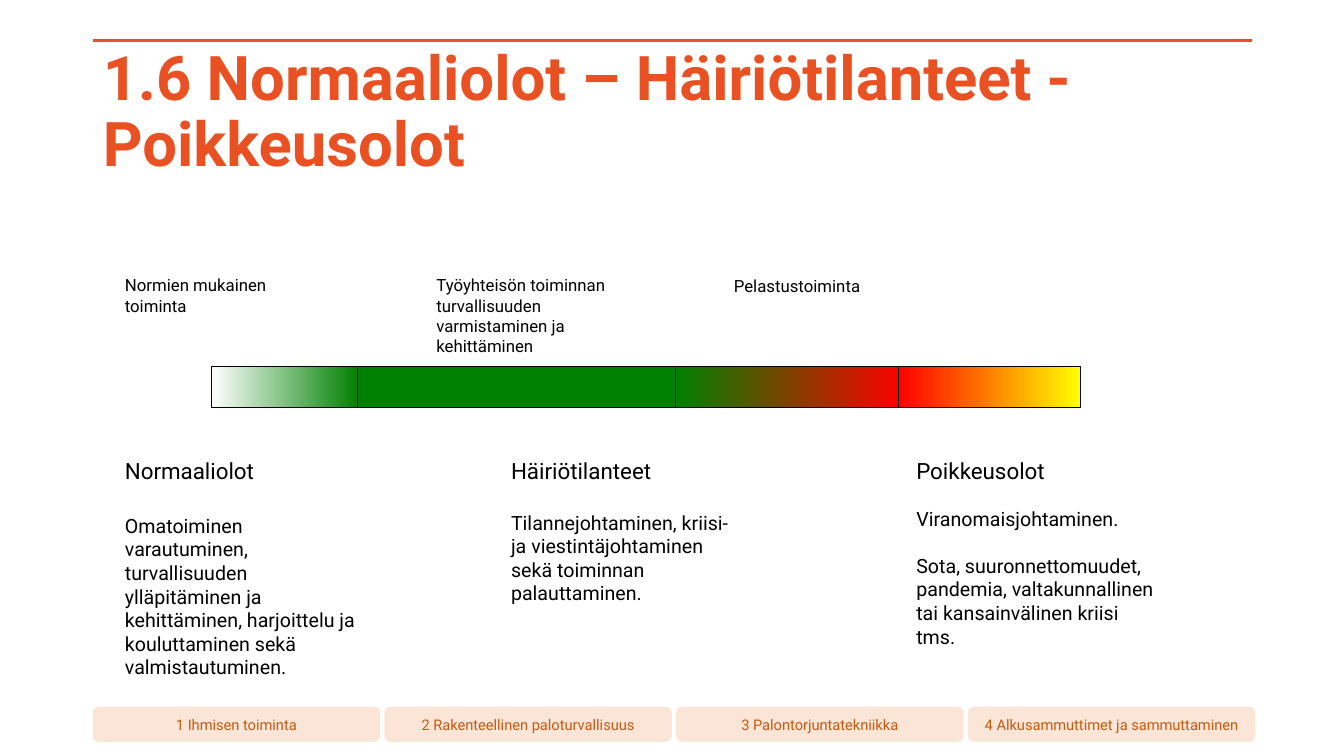
from dataclasses import dataclass

from lxml import etree
from pptx import Presentation
from pptx.dml.color import RGBColor
from pptx.enum.shapes import MSO_CONNECTOR, MSO_SHAPE
from pptx.enum.text import MSO_ANCHOR, MSO_AUTO_SIZE, PP_ALIGN
from pptx.oxml.ns import qn
from pptx.util import Inches, Pt

RECT = MSO_SHAPE.RECTANGLE
ROUND = MSO_SHAPE.ROUNDED_RECTANGLE
STRAIGHT = MSO_CONNECTOR.STRAIGHT
MIDDLE = MSO_ANCHOR.MIDDLE
LEFT, CENTER = PP_ALIGN.LEFT, PP_ALIGN.CENTER
FIXED = MSO_AUTO_SIZE.NONE


@dataclass(frozen=True)
class Theme:
    """Colours, font and type sizes of the slide."""
    font: str = "Roboto"
    accent: str = "E95123"
    tab: str = "FBE5D6"
    tab_ink: str = "C55A11"
    ink: str = "000000"
    white: str = "FFFFFF"
    green: str = "008000"
    red: str = "FF0000"
    yellow: str = "FFFF00"
    title: float = 44
    head: float = 16
    body: float = 14
    label: float = 12
    small: float = 10.5


THEME = Theme()
TABS = (
    "1 Ihmisen toiminta",
    "2 Rakenteellinen paloturvallisuus",
    "3 Palontorjuntatekniikka",
    "4 Alkusammuttimet ja sammuttaminen",
)
ZONES = (
    (2.1, 1.46, THEME.white, THEME.green),
    (3.55, 3.15, THEME.green, THEME.green),
    (6.7, 2.28, THEME.green, THEME.red),
    (8.91, 1.81, THEME.red, THEME.yellow),
)
LABELS = (
    ((1.14, 2.68, 2.23, 0.3), "Normien mukainen toiminta"),
    ((4.23, 2.68, 2.17, 0.91),
     "Työyhteisön toiminnan turvallisuuden varmistaminen ja kehittäminen"),
    ((7.18, 2.69, 1.81, 0.3), "Pelastustoiminta"),
)
STATES = (
    ((1.14, 4.49, 2.55, 1.85), "Normaaliolot", (
        (21, "Omatoiminen varautuminen, turvallisuuden ylläpitäminen ja "
             "kehittäminen, harjoittelu ja kouluttaminen sekä valmistautuminen."),
    )),
    ((4.97, 4.49, 2.38, 1.35), "Häiriötilanteet", (
        (18.75, "Tilannejohtaminen, kriisi- ja viestintäjohtaminen sekä "
                "toiminnan palauttaminen."),
    )),
    ((8.99, 4.49, 2.63, 1.78), "Poikkeusolot", (
        (16.4, "Viranomaisjohtaminen."),
        (16.4, "Sota, suuronnettomuudet, pandemia, valtakunnallinen tai "
               "kansainvälinen kriisi tms."),
    )),
)


def tint(code):
    """Turn a hex code into a colour."""
    return RGBColor.from_string(code)


def span(box):
    """Turn a box in inches into lengths."""
    return [Inches(side) for side in box]


def write(para, text, size, color=THEME.ink, bold=False):
    """Add one styled run to a paragraph."""
    run = para.add_run()
    run.text = text
    run.font.name = THEME.font
    run.font.size = Pt(size)
    run.font.bold = bold
    run.font.color.rgb = tint(color)


def block(slide, kind, box):
    """Add a preset shape without a shadow."""
    shape = slide.shapes.add_shape(kind, *span(box))
    shape.shadow.inherit = False
    return shape


def header(slide, box, text):
    """Set the title in its box, with a rule along the top edge."""
    left, top, width, height = span(box)
    rule = slide.shapes.add_connector(STRAIGHT, left, top, left + width, top)
    rule.line.color.rgb = tint(THEME.accent)
    rule.line.width = Pt(2.5)
    etree.SubElement(rule.line._get_or_add_ln().getparent(), qn("a:effectLst"))
    title = slide.shapes.title
    title.left, title.top, title.width, title.height = left, top, width, height
    frame = title.text_frame
    frame.auto_size = FIXED
    frame.word_wrap = True
    frame.vertical_anchor = MIDDLE
    para = frame.paragraphs[0]
    para.alignment = LEFT
    para.line_spacing = 0.9
    write(para, text, THEME.title, THEME.accent, True)


def footer(slide, box, names):
    """Spread equal tabs across the box."""
    left, top, width, height = box
    wide = 2.85
    step = (width - wide) / (len(names) - 1)
    for i, name in enumerate(names):
        tab = block(slide, ROUND, (left + i * step, top, wide, height))
        tab.fill.solid()
        tab.fill.fore_color.rgb = tint(THEME.tab)
        tab.line.fill.background()
        frame = tab.text_frame
        frame.word_wrap = True
        frame.vertical_anchor = MIDDLE
        para = frame.paragraphs[0]
        para.alignment = CENTER
        write(para, name, THEME.small, THEME.tab_ink)


def scale(slide, top, height, zones):
    """Draw the colour scale from its zones, left to right."""
    for left, width, start, end in zones:
        zone = block(slide, RECT, (left, top, width, height))
        if start == end:
            zone.fill.solid()
            zone.fill.fore_color.rgb = tint(start)
        else:
            zone.fill.gradient()
            zone.fill.gradient_angle = 0
            for i, (stop, code) in enumerate(
                    zip(zone.fill.gradient_stops, (start, end))):
                stop.position = i
                stop.color.rgb = tint(code)
        zone.line.color.rgb = tint(THEME.ink)
        zone.line.width = Pt(0.75)


def note(slide, box, text, size, parts=()):
    """Write a lead line and any spaced paragraphs below it."""
    frame = slide.shapes.add_textbox(*span(box)).text_frame
    frame.word_wrap = True
    write(frame.paragraphs[0], text, size)
    for gap, part in parts:
        para = frame.add_paragraph()
        para.space_before = Pt(gap)
        write(para, part, THEME.body)


def main():
    """Build the slide and save it."""
    deck = Presentation()
    deck.slide_width, deck.slide_height = Inches(13.33), Inches(7.5)
    slide = deck.slides.add_slide(deck.slide_layouts[5])
    header(slide, (0.92, 0.4, 11.5, 1.45),
           "1.6 Normaaliolot – Häiriötilanteet - Poikkeusolot")
    footer(slide, (0.92, 7.01, 11.53, 0.35), TABS)
    scale(slide, 3.64, 0.4, ZONES)
    for box, text in LABELS:
        note(slide, box, text, THEME.label)
    for box, head, parts in STATES:
        note(slide, box, head, THEME.head, parts)
    deck.save("out.pptx")


if __name__ == "__main__":
    main()
